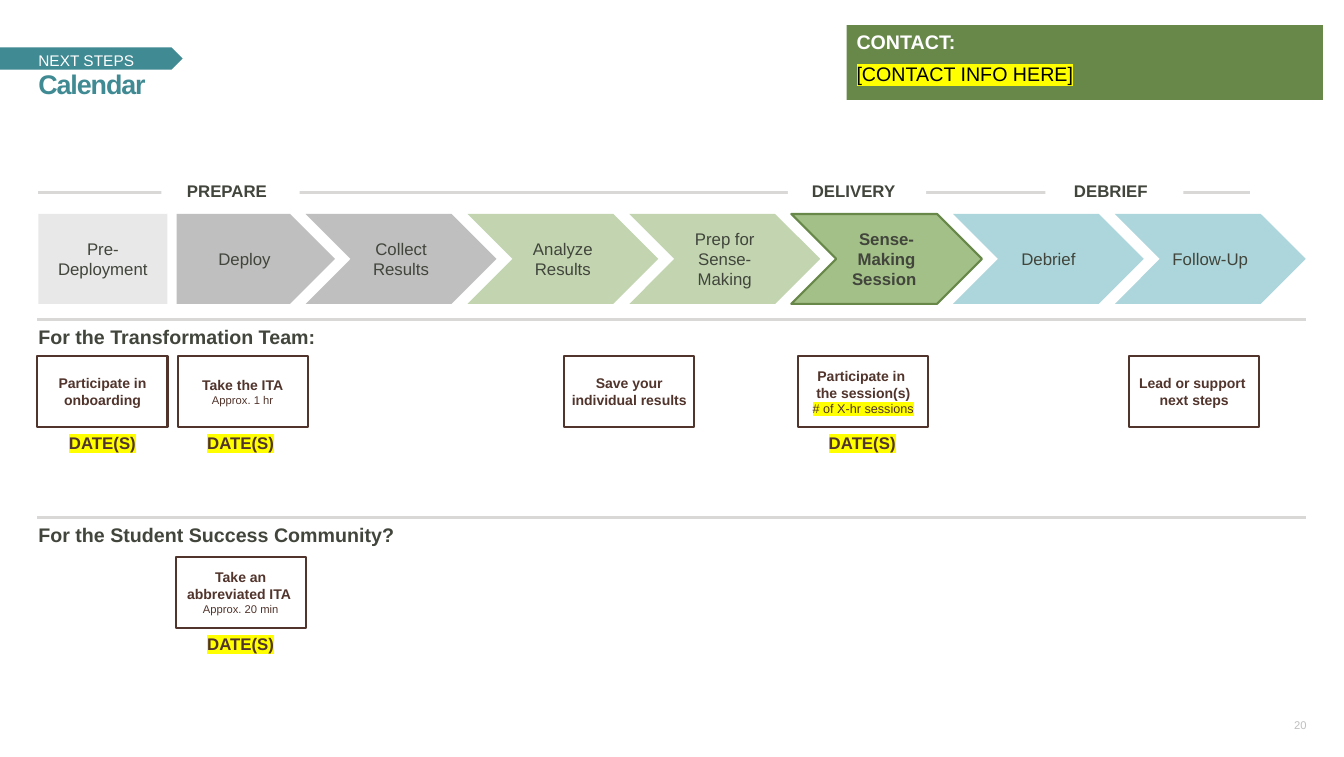
from lxml import etree
from pptx import Presentation
from pptx.dml.color import RGBColor
from pptx.enum.shapes import MSO_CONNECTOR, MSO_SHAPE as SHAPE
from pptx.enum.text import MSO_ANCHOR as ANCHOR, MSO_AUTO_SIZE, PP_ALIGN as ALIGN
from pptx.oxml.ns import qn
from pptx.util import Inches, Pt

TEAL, GREEN, INK, BROWN = "408A93", "678848", "41453B", "51342C"
GREY, RULE, SAGE, SKY = "BFBFBF", "D9D8D6", "C2D5B0", "ACD6DB"
WHITE, YELLOW = "FFFFFF", "FFFF00"


def add_box(kind, at, fill=None, line=None):
    """Add a shadowless shape; no fill or line unless a colour is given."""
    sp = s.shapes.add_shape(kind, *map(Inches, at))
    sp.shadow.inherit = False
    if fill:
        sp.fill.solid()
        sp.fill.fore_color.rgb = RGBColor.from_string(fill)
    else:
        sp.fill.background()
    if line:
        sp.line.color.rgb = RGBColor.from_string(line)
        sp.line.width = Pt(1.5)
    else:
        sp.line.fill.background()
    return sp


def write(sp, paragraphs, align=ALIGN.CENTER, anchor=ANCHOR.MIDDLE,
          insets=(0, 0, 0, 0), wrap=True, **spacing):
    """Fill a shape with (text, size, colour, bold, highlight) paragraphs."""
    tf = sp.text_frame
    left, top, right, bottom = map(Inches, insets)
    frame = {"margin_left": left, "margin_top": top, "margin_right": right,
             "margin_bottom": bottom, "word_wrap": wrap,
             "vertical_anchor": anchor, "auto_size": MSO_AUTO_SIZE.NONE}
    for name, value in frame.items():
        setattr(tf, name, value)
    for i, (text, size, colour, bold, highlight) in enumerate(paragraphs):
        p = tf.paragraphs[0] if i == 0 else tf.add_paragraph()
        for name, value in {"alignment": align, **spacing}.items():
            setattr(p, name, value)
        for j, part in enumerate(text.split("\n")):
            if j:
                p.add_line_break()
            r = p.add_run()
            r.text = part
            for name, value in {"name": "Arial", "size": Pt(size), "bold": bold}.items():
                setattr(r.font, name, value)
            r.font.color.rgb = RGBColor.from_string(colour)
            if highlight:
                mark = etree.Element(qn("a:highlight"))
                etree.SubElement(mark, qn("a:srgbClr"), val=highlight)
                r.font._element.find(qn("a:solidFill")).addnext(mark)


prs = Presentation()
prs.slide_width, prs.slide_height = Inches(13.32), Inches(7.5)
s = prs.slides.add_slide(prs.slide_layouts[1])

# Heading: the tag lies behind the section name
tag = add_box(SHAPE.PENTAGON, (0, 0.47, 1.81, 0.22), TEAL)
s.shapes._spTree.insert(2, tag._element)
title, section = s.shapes.title, s.placeholders[1]
for sp, top, height in [(section, 0.46, 0.23), (title, 0.71, 0.31)]:
    sp.left, sp.top, sp.width, sp.height = map(Inches, (0.38, top, 12.56, height))
write(section, [("NEXT STEPS", 11, WHITE, False, None)], ALIGN.LEFT,
      ANCHOR.BOTTOM, space_before=Pt(2))
pPr = section.text_frame.paragraphs[0]._p.get_or_add_pPr()
pPr.set("marL", "0")
pPr.set("indent", "0")
etree.SubElement(pPr, qn("a:buNone"))
write(title, [("Calendar", 19.2, TEAL, True, None)], ALIGN.LEFT,
      ANCHOR.TOP, space_before=Pt(4), line_spacing=0.9)
title.text_frame.paragraphs[0].runs[0].font._element.set("spc", "-80")

contact = add_box(SHAPE.RECTANGLE, (8.39, 0.25, 4.72, 0.74), GREEN)
write(contact, [("CONTACT:", 14, WHITE, True, None),
                ("[CONTACT INFO HERE]", 14, "000000", False, YELLOW)],
      ALIGN.LEFT, ANCHOR.TOP, (0.1, 0.05, 0.1, 0.05), space_before=Pt(6))

# Rules: phase line and the two section dividers
for x1, x2, y in [(0.38, 12.39, 1.91), (0.37, 12.94, 3.17), (0.37, 12.94, 5.13)]:
    rule = s.shapes.add_connector(MSO_CONNECTOR.STRAIGHT, Inches(x1), Inches(y),
                                  Inches(x2), Inches(y))
    rule.line.color.rgb = RGBColor.from_string(RULE)
    rule.line.width = Pt(2.25)
    etree.SubElement(rule._element.spPr, qn("a:effectLst"))

for phase, left in [("PREPARE", 1.6), ("DELIVERY", 7.81), ("DEBRIEF", 10.36)]:
    label = add_box(SHAPE.RECTANGLE, (left, 1.76, 1.37, 0.29), WHITE)
    write(label, [(phase, 12, INK, True, None)], insets=(0, 0, 0.07, 0),
          line_spacing=0.9)

# Process steps
STEP_TOP, STEP_H = 2.12, 0.89
pre = add_box(SHAPE.RECTANGLE, (0.38, STEP_TOP, 1.28, STEP_H), "D9D9D9")
etree.SubElement(pre._element.spPr.find(".//" + qn("a:srgbClr")),
                 qn("a:alpha"), val="58000")
write(pre, [("Pre-Deployment", 12, INK, False, None)], insets=(0.1, 0, 0.1, 0))
deploy = add_box(SHAPE.PENTAGON, (1.75, STEP_TOP, 1.57, STEP_H), GREY)
write(deploy, [("Deploy", 12, INK, False, None)])

steps = [("Collect Results", GREY), ("Analyze Results", SAGE),
         ("Prep for Sense-Making", SAGE), ("Sense-Making Session ", "A4C089"),
         ("Debrief", SKY), ("Follow-Up", SKY)]
for i, (step, fill) in enumerate(steps):
    current = step.startswith("Sense")
    chevron = add_box(SHAPE.CHEVRON, (3.03 + 1.604 * i, STEP_TOP, 1.89, STEP_H),
                      fill, GREEN if current else None)
    write(chevron, [(step, 12, INK, current, None)], insets=(0.09, 0, 0.09, 0))

# Tasks for each audience: left, top, date left, lead text, optional detail
for audience, top in [("For the Transformation Team:", 3.22),
                      ("For the Student Success Community?", 5.18)]:
    sp = s.shapes.add_textbox(*map(Inches, (0.38, top, 8.79, 0.22)))
    write(sp, [(audience, 14, INK, True, None)], ALIGN.LEFT, ANCHOR.TOP)

tasks = [
    (0.37, 3.53, 0.37, "Participate in onboarding", None),
    (1.76, 3.53, 1.74, "Take the ITA", ("Approx. 1 hr", 8, BROWN, False, None)),
    (5.59, 3.53, None, "Save your individual results", None),
    (7.91, 3.53, 7.9, "Participate in \nthe session(s)",
     ("# of X-hr sessions", 9, BROWN, False, YELLOW)),
    (11.19, 3.53, None, "Lead or support \nnext steps", None),
    (1.74, 5.52, 1.74, "Take an abbreviated ITA ",
     ("Approx. 20 min", 8, BROWN, False, None)),
]
for left, top, date_left, lead, detail in tasks:
    card = add_box(SHAPE.RECTANGLE, (left, top, 1.29, 0.7), line=BROWN)
    lines = [(lead, 10, BROWN, True, None)] + ([detail] if detail else [])
    write(card, lines, insets=(0.01, 0, 0.01, 0))
    if date_left is not None:
        date = s.shapes.add_textbox(*map(Inches, (date_left, top + 0.76, 1.29, 0.2)))
        write(date, [("DATE(S)", 12, BROWN, True, YELLOW)], anchor=ANCHOR.TOP)

number = s.shapes.add_textbox(*map(Inches, (12.81, 7.11, 0.14, 0.14)))
write(number, [("20", 8, GREY, False, None)], ALIGN.RIGHT, wrap=False)

prs.save("out.pptx")
